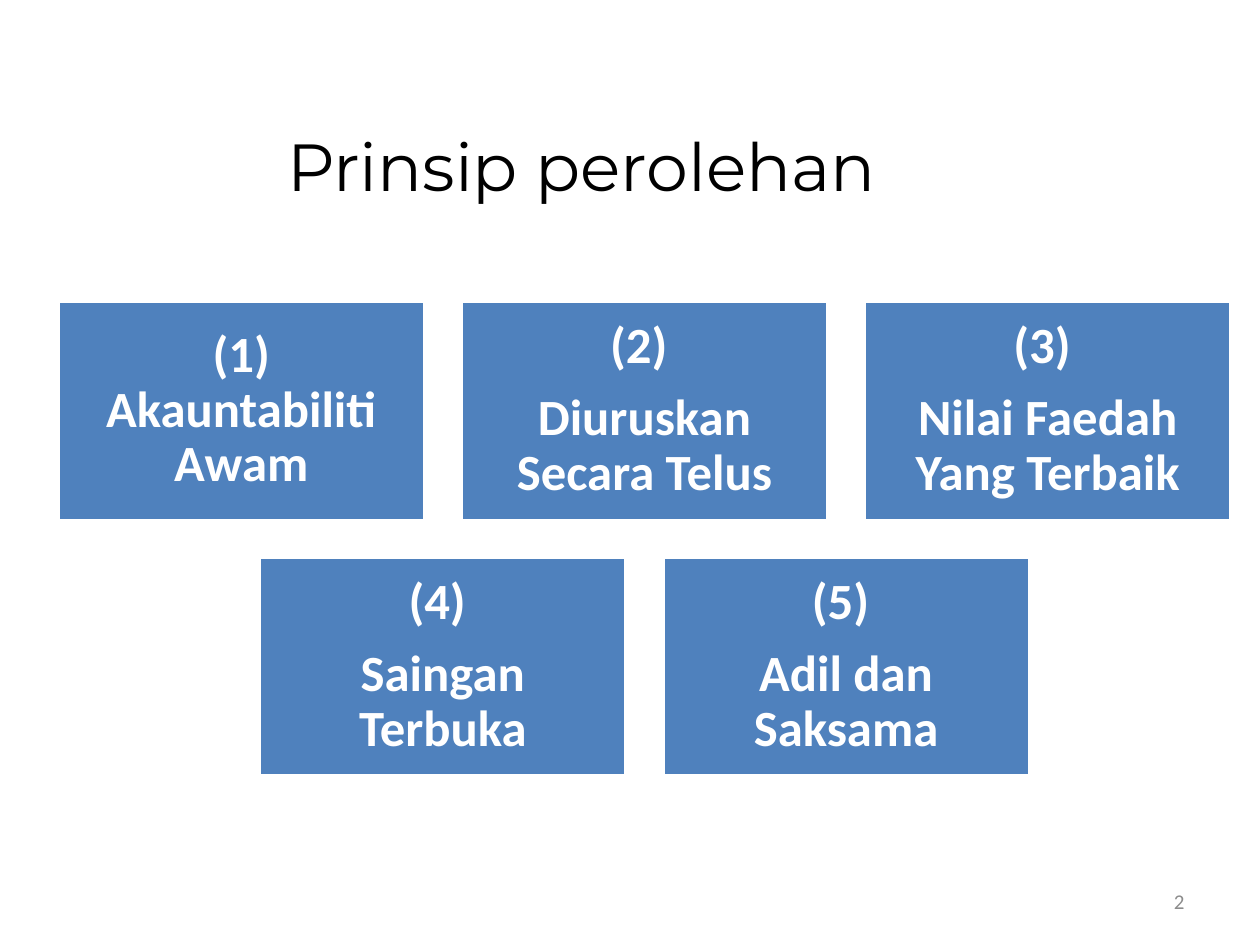
from dataclasses import dataclass

from pptx import Presentation
from pptx.dml.color import RGBColor
from pptx.enum.shapes import MSO_SHAPE
from pptx.enum.text import MSO_ANCHOR, MSO_AUTO_SIZE, PP_ALIGN
from pptx.util import Cm, Pt


@dataclass(frozen=True)
class Theme:
    black: RGBColor = RGBColor.from_string("000000")
    white: RGBColor = RGBColor.from_string("FFFFFF")
    blue: RGBColor = RGBColor.from_string("4F81BD")
    grey: RGBColor = RGBColor.from_string("8C8C8C")
    title_font: str = "Montserrat"
    body_font: str = "Calibri"
    title_size: Pt = Pt(38)
    card_size: Pt = Pt(29)
    number_size: Pt = Pt(12)


theme = Theme()


def apply_format(target, values):
    for name, value in values.items():
        setattr(target, name, value)


def format_paragraph(paragraph, layout, font, color):
    apply_format(paragraph, layout)
    apply_format(paragraph.font, font)
    paragraph.font.color.rgb = color


presentation = Presentation()
apply_format(presentation, {"slide_width": Cm(25.4), "slide_height": Cm(19.05)})
slide = presentation.slides.add_slide(presentation.slide_layouts[5])

# Title
title = slide.shapes.title
apply_format(title, {"left": Cm(1.17), "top": Cm(2.11), "width": Cm(21.11), "height": Cm(2.41)})
title.text_frame.text = "Prinsip perolehan"
apply_format(title.text_frame, {"auto_size": MSO_AUTO_SIZE.NONE, "vertical_anchor": MSO_ANCHOR.MIDDLE})
format_paragraph(title.text_frame.paragraphs[0], {"alignment": PP_ALIGN.CENTER},
                 {"name": theme.title_font, "size": theme.title_size}, theme.black)

# Principle cards: three above, two centred below
card_rows = [
    [["(1) Akauntabiliti Awam"],
     ["(2) ", "Diuruskan Secara Telus"],
     ["(3) ", "Nilai Faedah Yang Terbaik"]],
    [["(4) ", "Saingan Terbuka"],
     ["(5) ", "Adil dan Saksama"]],
]
grid_left, grid_top = 1.17, 6.07
card_width, card_height = 7.39, 4.42
column_step, row_step = 8.13, 5.16
columns = max(len(row) for row in card_rows)
card_frame = {"word_wrap": True, "vertical_anchor": MSO_ANCHOR.MIDDLE}
card_frame.update({f"margin_{side}": Cm(0.3) for side in ("left", "top", "right", "bottom")})
card_font = {"name": theme.body_font, "size": theme.card_size, "bold": True}

card_group = slide.shapes.add_group_shape()
for row_index, row in enumerate(card_rows):
    row_left = grid_left + (columns - len(row)) * column_step / 2
    for column_index, lines in enumerate(row):
        card = card_group.shapes.add_shape(
            MSO_SHAPE.RECTANGLE,
            Cm(row_left + column_index * column_step), Cm(grid_top + row_index * row_step),
            Cm(card_width), Cm(card_height))
        card.shadow.inherit = False
        card.fill.solid()
        card.fill.fore_color.rgb = theme.blue
        card.line.color.rgb = theme.white
        card.line.width = Pt(2)
        card.text_frame.text = "\n".join(lines)
        apply_format(card.text_frame, card_frame)
        for paragraph in card.text_frame.paragraphs:
            format_paragraph(paragraph, {"alignment": PP_ALIGN.CENTER, "line_spacing": 0.9,
                                         "space_after": Pt(10)}, card_font, theme.white)

# Slide number
number_box = slide.shapes.add_textbox(Cm(18.2), Cm(17.66), Cm(5.93), Cm(1.01))
number_box.text_frame.text = "2"
apply_format(number_box.text_frame, {"word_wrap": True, "vertical_anchor": MSO_ANCHOR.MIDDLE})
format_paragraph(number_box.text_frame.paragraphs[0], {"alignment": PP_ALIGN.RIGHT},
                 {"name": theme.body_font, "size": theme.number_size}, theme.grey)

presentation.save("out.pptx")
